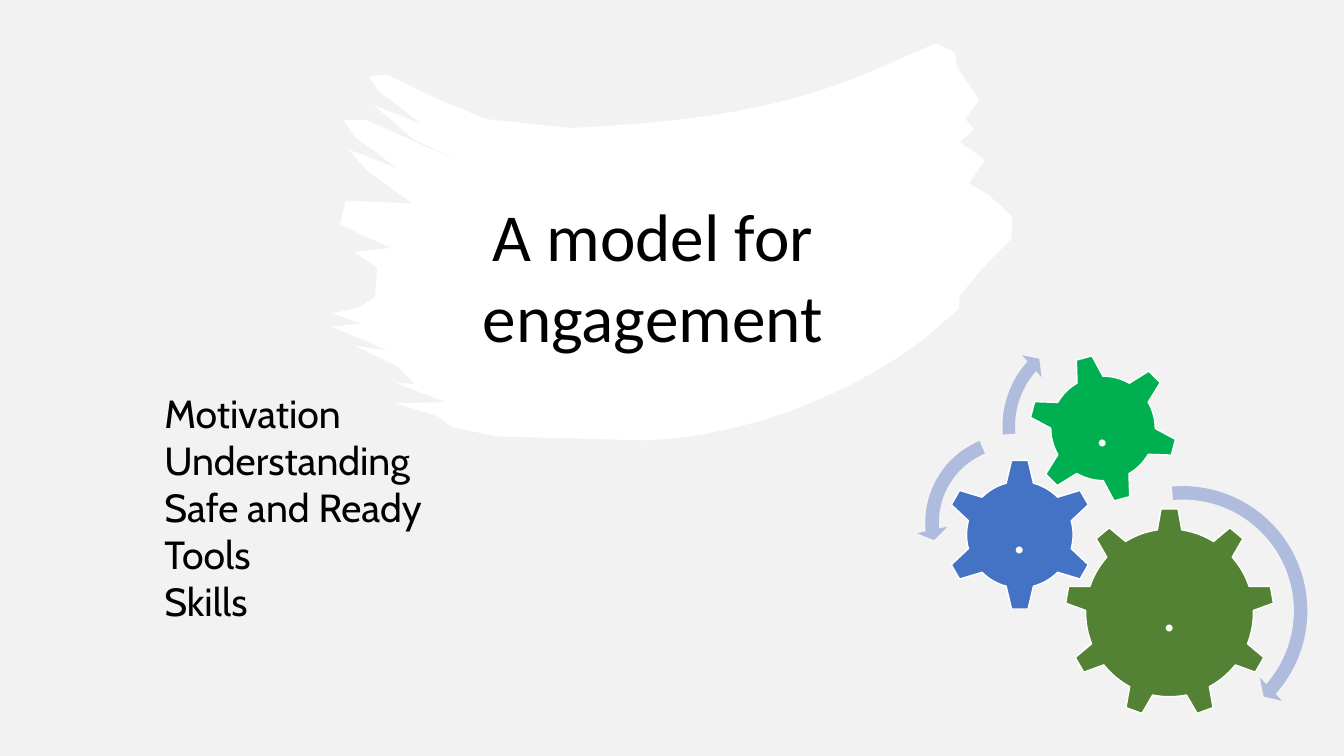
from lxml import etree
from pptx import Presentation
from pptx.dml.color import RGBColor
from pptx.enum.shapes import MSO_SHAPE
from pptx.enum.text import MSO_ANCHOR, MSO_AUTO_SIZE, PP_ALIGN
from pptx.oxml.ns import qn
from pptx.util import Inches, Pt

CENTER, LEFT = PP_ALIGN.CENTER, PP_ALIGN.LEFT
TOP, MIDDLE = MSO_ANCHOR.TOP, MSO_ANCHOR.MIDDLE
GEAR_6, GEAR_9 = MSO_SHAPE.GEAR_6, MSO_SHAPE.GEAR_9
ARROW, LEFT_ARROW = MSO_SHAPE.CIRCULAR_ARROW, MSO_SHAPE.LEFT_CIRCULAR_ARROW

COLORS = {
    "backdrop": "F2F2F2",
    "white": "FFFFFF",
    "text": "000000",
    "olive": "548235",
    "blue": "4472C4",
    "green": "00B050",
    "arrow": "B0BCDE",
}

TOPICS = ["Motivation", "Understanding", "Safe and Ready", "Tools", "Skills"]

# The brush stroke in inches: two long curves, each with start, two handles and end
TOP_EDGE = [(8.8, 0.64), (8, 1), (7.2, 1.2), (5.65, 1.27)]
BOTTOM_EDGE = [(6.43, 4.37), (8.1, 4.28), (9.25, 3.3), (9.25, 3.29)]
LEFT_BRISTLES = [
    (4.81, 1.18), (4.31, 0.97), (3.84, 0.74), (3.66, 0.76), (3.75, 0.9), (4.18, 1.23),
    (3.7, 1.04), (4.1, 1.38), (4.62, 1.63), (3.63, 1.19), (3.41, 1.19), (3.51, 1.35),
    (3.94, 1.67), (3.45, 1.48), (3.65, 1.7), (4.09, 2.02), (3.43, 1.99), (3.37, 2.23),
    (3.88, 2.46), (3.51, 2.5), (3.74, 2.66), (3.72, 2.95), (3.56, 3.05), (3.3, 3.11),
    (3.58, 3.21), (3.29, 3.24), (3.85, 3.48), (3.52, 3.43), (3.95, 3.64), (4.11, 3.81),
    (3.93, 3.8), (4.42, 3.99), (3.93, 4), (4.34, 4.13), (4.49, 4.24), (4.93, 4.33),
]
RIGHT_BRISTLES = [
    (9.51, 3.06), (9.52, 2.93), (9.78, 2.62), (10.03, 2.37), (10.04, 2.15),
    (9.8, 1.93), (9.61, 1.82), (9.77, 1.59), (9.52, 1.41), (9.66, 1.28),
    (9.57, 1.18), (9.71, 0.99), (9.49, 0.66), (9.47, 0.52), (9.28, 0.43),
]


def rgb(name):
    return RGBColor.from_string(COLORS[name])


def paint(shape, color, outline=None):
    shape.shadow.inherit = False
    shape.fill.solid()
    shape.fill.fore_color.rgb = rgb(color)
    if outline:
        shape.line.color.rgb = rgb(outline)
        shape.line.width = Pt(1)
    else:
        shape.line.fill.background()


def place(box, left, top, width, height):
    box.left, box.top = Inches(left), Inches(top)
    box.width, box.height = Inches(width), Inches(height)


def write(box, lines, font, size, color, align, anchor):
    """Fill a box with one plain, unbulleted paragraph per line."""
    frame = box.text_frame
    frame.word_wrap = True
    frame.auto_size = MSO_AUTO_SIZE.NONE
    frame.vertical_anchor = anchor
    for index, line in enumerate(lines):
        para = frame.add_paragraph() if index else frame.paragraphs[0]
        para.alignment = align
        para.space_before = Pt(0)
        properties = para._p.get_or_add_pPr()
        properties.set("marL", "0")
        properties.set("indent", "0")
        etree.SubElement(properties, qn("a:buNone"))
        span = para.add_run()
        span.text = line
        span.font.name = font
        span.font.size = Pt(size)
        span.font.color.rgb = rgb(color)


def curve(controls, steps=16):
    """Points along a cubic Bezier curve."""
    points = []
    for step in range(steps + 1):
        t = step / steps
        weights = ((1 - t) ** 3, 3 * t * (1 - t) ** 2, 3 * t * t * (1 - t), t ** 3)
        points.append(tuple(
            sum(weight * point[axis] for weight, point in zip(weights, controls))
            for axis in range(2)))
    return points


def add_brush(page):
    """Draw the white brush stroke behind everything else."""
    outline = curve(TOP_EDGE) + LEFT_BRISTLES + curve(BOTTOM_EDGE) + RIGHT_BRISTLES
    points = [(Inches(x), Inches(y)) for x, y in outline]
    builder = page.shapes.build_freeform(*points[0])
    builder.add_line_segments(points[1:], close=True)
    brush = builder.convert_to_shape()
    paint(brush, "white")
    brush._element.getparent().insert(2, brush._element)


def add_gear(shapes, kind, left, top, size, color, rotation=0):
    """Draw a gear with a dot of text around its centre."""
    area = [Inches(length) for length in (left, top, size, size)]
    gear = shapes.add_shape(kind, *area)
    gear.rotation = rotation
    paint(gear, color, "white")
    dot = shapes.add_textbox(*area)
    frame = dot.text_frame
    frame.margin_left = frame.margin_right = Inches(0.06)
    frame.margin_top = frame.margin_bottom = Inches(0.06)
    write(dot, ["."], "Calibri", 41, "white", CENTER, MIDDLE)
    frame.paragraphs[0].line_spacing = 0.9


def add_arrow(shapes, kind, left, top, size, adjustments):
    arrow = shapes.add_shape(kind, Inches(left), Inches(top), Inches(size), Inches(size))
    for index, value in enumerate(adjustments):
        arrow.adjustments[index] = value
    paint(arrow, "arrow")


def add_gears(page):
    shapes = page.shapes.add_group_shape().shapes
    add_gear(shapes, GEAR_9, 10.56, 5.04, 2.08, "olive")
    add_gear(shapes, GEAR_6, 9.36, 4.55, 1.51, "blue")
    add_gear(shapes, GEAR_6, 10.2, 3.51, 1.48, "green", 345)
    add_arrow(shapes, ARROW, 10.4, 4.73, 2.66, (0.05, 2.99, 24.96, 159.06, 0.06))
    add_arrow(shapes, LEFT_ARROW, 9.09, 4.22, 1.93, (0.07, 4.3, 104.89, 148.38, 0.08))
    add_arrow(shapes, ARROW, 9.86, 3.19, 2.08, (0.06, 3.94, 133.14, 105.08, 0.07))


def main():
    deck = Presentation()
    deck.slide_width, deck.slide_height = Inches(13.33), Inches(7.5)
    page = deck.slides.add_slide(deck.slide_layouts[1])
    page.background.fill.solid()
    page.background.fill.fore_color.rgb = rgb("backdrop")

    add_brush(page)
    title, topics = page.placeholders
    place(title, 4.03, 1.88, 4.89, 1.72)
    write(title, ["A model for engagement"], "Calibri", 48, "text", CENTER, TOP)
    add_gears(page)
    place(topics, 1.53, 3.81, 3, 2.76)
    write(topics, TOPICS, "Cabin", 28, "text", LEFT, TOP)
    deck.save("out.pptx")


if __name__ == "__main__":
    main()
